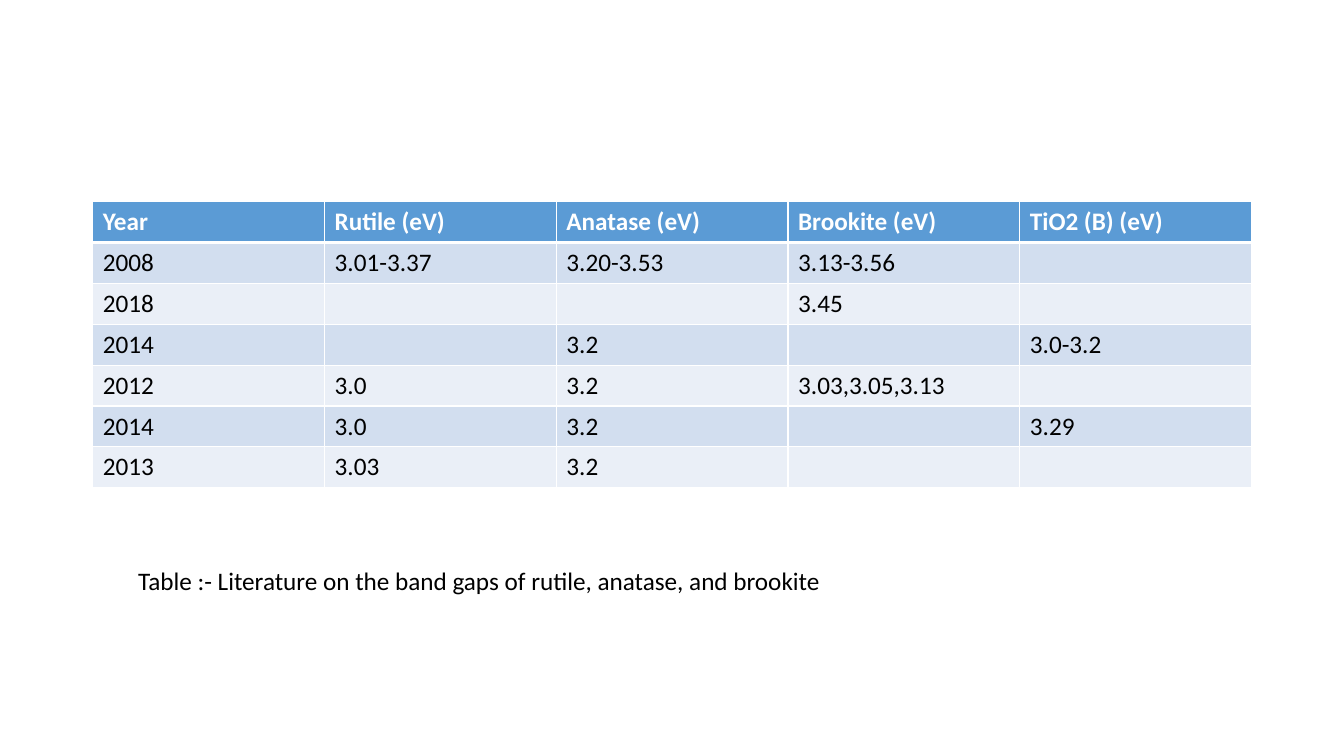
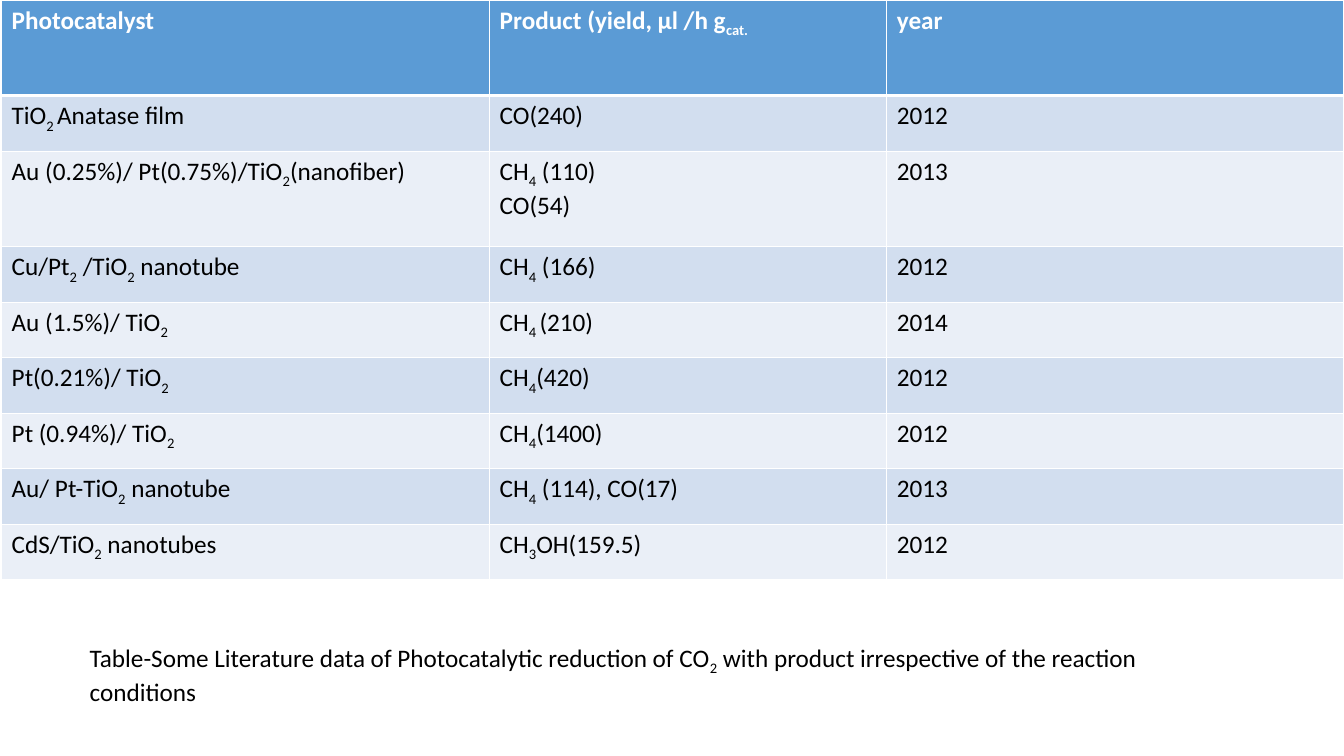
from lxml.etree import SubElement
from pptx import Presentation
from pptx.dml.color import RGBColor
from pptx.enum.text import MSO_AUTO_SIZE as AutoSize
from pptx.oxml.ns import qn
from pptx.util import Cm, Pt

COLORS = {
    "header": "5B9BD5",
    "odd": "D2DEEF",
    "even": "EAEFF7",
    "border": "FFFFFF",
    "header_text": "FFFFFF",
    "text": "000000",
}
FONT = "Calibri"
SUBSCRIPT_MARK = "~"
THIN, THICK = 1, 3

SLIDES = [
    {
        "rows": [
            ["Year", "Rutile (eV)", "Anatase (eV)", "Brookite (eV)", "TiO2 (B) (eV)"],
            ["2008", "3.01-3.37", "3.20-3.53", "3.13-3.56", ""],
            ["2018", "", "", "3.45", ""],
            ["2014", "", "3.2", "", "3.0-3.2"],
            ["2012", "3.0", "3.2", "3.03,3.05,3.13", ""],
            ["2014", "3.0", "3.2", "", "3.29"],
            ["2013", "3.03", "3.2", "", ""],
        ],
        "table_at": (2.34, 5.08),
        "widths": [5.84] * 5,
        "row_height": 1.03,
        "tall_rows": {},
        "caption": "Table :- Literature on the band gaps of rutile, anatase, and brookite",
        "caption_at": (3.23, 14.12, 20.5, 1.03),
    },
    {
        "rows": [
            ["Photocatalyst", "Product (yield, μl /h g~cat.~", "year"],
            ["TiO~2 ~Anatase film", "CO(240)", "2012"],
            ["Au (0.25%)/ Pt(0.75%)/TiO~2~(nanofiber)", "CH~4~ (110)\nCO(54)", "2013"],
            ["Cu/Pt~2~ /TiO~2~ nanotube", "CH~4~ (166)", "2012"],
            ["Au (1.5%)/ TiO~2~", "CH~4 ~(210)", "2014"],
            ["Pt(0.21%)/ TiO~2~", "CH~4~(420)", "2012"],
            ["Pt (0.94%)/ TiO~2~", "CH~4~(1400)", "2012"],
            ["Au/ Pt-TiO~2~ nanotube", "CH~4~ (114), CO(17)", "2013"],
            ["CdS/TiO~2~ nanotubes", "CH~3~OH(159.5)", "2012"],
        ],
        "table_at": (0.04, 0),
        "widths": [12.3, 10.01, 11.51],
        "row_height": 1.4,
        "tall_rows": {0: 2.41, 2: 2.41},
        "caption": "Table-Some Literature data of Photocatalytic reduction of CO~2~"
                   " with product irrespective of the reaction conditions",
        "caption_at": (2.01, 16.05, 27.1, 1.79),
    },
]


def write_text(text_frame, text, color="text", bold=False, size=18):
    for line_index, line in enumerate(text.split("\n")):
        paragraph = text_frame.add_paragraph() if line_index else text_frame.paragraphs[0]
        for part_index, part in enumerate(line.split(SUBSCRIPT_MARK)):
            if not part:
                continue
            run = paragraph.add_run()
            run.text = part
            run.font.name = FONT
            run.font.size = Pt(size)
            run.font.bold = bold
            run.font.color.rgb = RGBColor.from_string(COLORS[color])
            if part_index % 2:
                run.font._element.set("baseline", "-25000")


def set_borders(cell, top, bottom):
    properties = cell._tc.get_or_add_tcPr()
    sides = {"lnL": THIN, "lnR": THIN, "lnT": top, "lnB": bottom}
    for side, width in sides.items():
        line = SubElement(properties, qn(f"a:{side}"), w=str(Pt(width)))
        fill = SubElement(line, qn("a:solidFill"))
        SubElement(fill, qn("a:srgbClr"), val=COLORS["border"])


def add_data_table(slide, rows, position, widths, row_height, tall_rows):
    heights = [tall_rows.get(index, row_height) for index in range(len(rows))]
    left, top = position
    table = slide.shapes.add_table(
        len(rows), len(widths), Cm(left), Cm(top), Cm(sum(widths)), Cm(sum(heights))
    ).table
    for column, width in zip(table.columns, widths):
        column.width = Cm(width)
    for row_index, (row, height, texts) in enumerate(zip(table.rows, heights, rows)):
        row.height = Cm(height)
        is_header = row_index == 0
        fill_name = "header" if is_header else "odd" if row_index % 2 else "even"
        for cell, text in zip(row.cells, texts):
            set_borders(
                cell,
                top=THICK if row_index == 1 else THIN,
                bottom=THICK if is_header else THIN,
            )
            cell.fill.solid()
            cell.fill.fore_color.rgb = RGBColor.from_string(COLORS[fill_name])
            write_text(
                cell.text_frame,
                text,
                color="header_text" if is_header else "text",
                bold=is_header,
            )


def add_caption(slide, text, box):
    text_frame = slide.shapes.add_textbox(*map(Cm, box)).text_frame
    text_frame.word_wrap = True
    text_frame.auto_size = AutoSize.SHAPE_TO_FIT_TEXT
    write_text(text_frame, text)


def main():
    presentation = Presentation()
    presentation.slide_width = Cm(33.87)
    presentation.slide_height = Cm(19.05)
    blank_layout = presentation.slide_layouts[6]
    for content in SLIDES:
        slide = presentation.slides.add_slide(blank_layout)
        add_data_table(
            slide,
            content["rows"],
            content["table_at"],
            content["widths"],
            content["row_height"],
            content["tall_rows"],
        )
        add_caption(slide, content["caption"], content["caption_at"])
    presentation.save("out.pptx")


if __name__ == "__main__":
    main()
